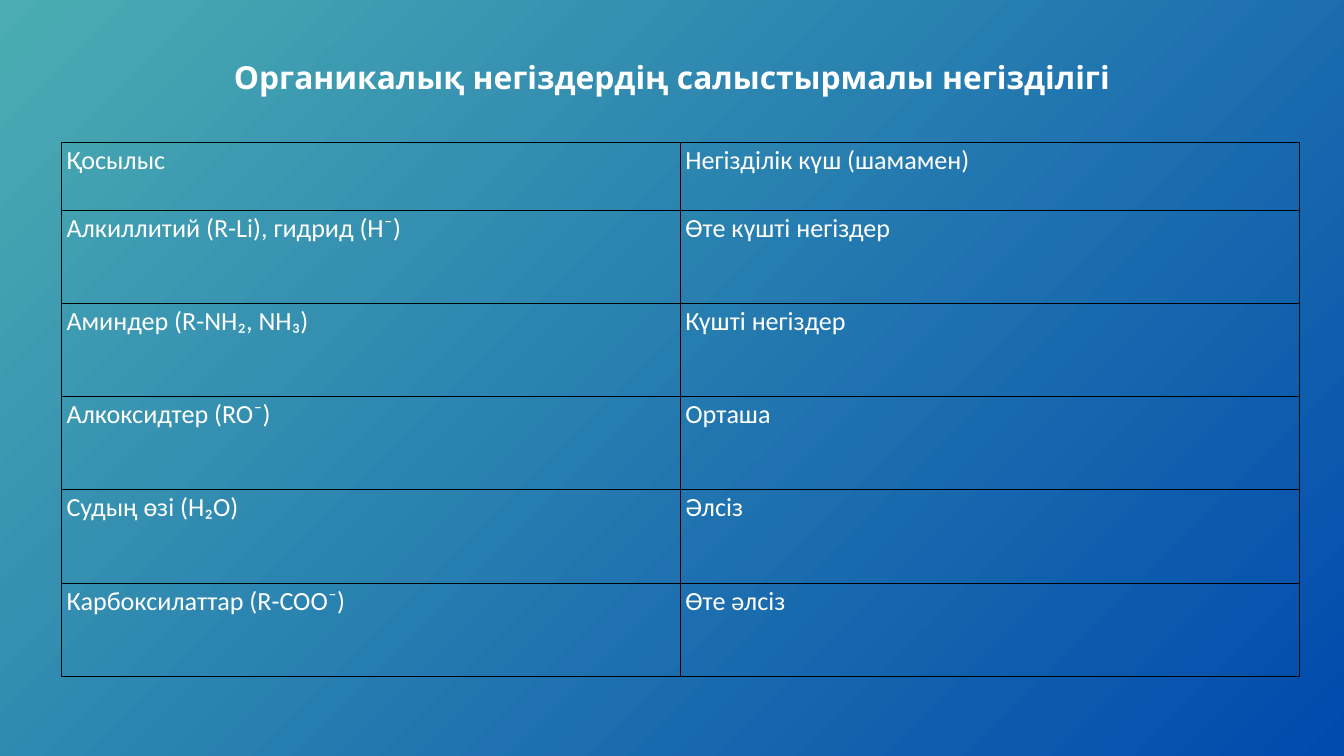
from lxml.etree import SubElement
from pptx import Presentation
from pptx.dml.color import RGBColor as Rgb
from pptx.enum.text import MSO_AUTO_SIZE as Fit, PP_ALIGN as Align
from pptx.oxml.ns import qn
from pptx.util import Inches, Pt

WHITE = Rgb(0xFF, 0xFF, 0xFF)
BLACK = Rgb(0x00, 0x00, 0x00)
TEAL = Rgb(0x4B, 0xAD, 0xB2)
BLUE = Rgb(0x00, 0x4A, 0xAD)

TITLE = "Органикалық негіздердің салыстырмалы негізділігі"
BASES = [
    ("Қосылыс", "Негізділік күш (шамамен)"),
    ("Алкиллитий (R-Li), гидрид (H⁻)", "Өте күшті негіздер"),
    ("Аминдер (R-NH₂, NH₃)", "Күшті негіздер"),
    ("Алкоксидтер (RO⁻)", "Орташа"),
    ("Судың өзі (H₂O)", "Әлсіз"),
    ("Карбоксилаттар (R-COO⁻)", "Өте әлсіз"),
]


def write(frame, text, font="Calibri", size=28, color=WHITE, bold=False,
          align=Align.LEFT, lead=1.07):
    para = frame.paragraphs[0]
    para.alignment = align
    para.line_spacing = lead
    run = para.add_run()
    run.text = text
    run.font.name = font
    run.font.size = Pt(size)
    run.font.bold = bold
    run.font.color.rgb = color


class Deck:
    """Draws styled elements on one slide with a grid of 100 columns by 100 rows."""

    def __init__(self, wide, high):
        self.prs = Presentation()
        self.prs.slide_width = Inches(wide)
        self.prs.slide_height = Inches(high)
        self.slide = self.prs.slides.add_slide(self.prs.slide_layouts[6])

    def x(self, cols):
        return round(self.prs.slide_width * cols / 100)

    def y(self, rows):
        return round(self.prs.slide_height * rows / 100)

    def box(self, left, top, wide, high):
        return self.x(left), self.y(top), self.x(wide), self.y(high)

    def back(self, start, end, angle):
        fill = self.slide.background.fill
        fill.gradient()
        fill.gradient_angle = 360 - angle
        for stop, color in zip(fill.gradient_stops, (start, end)):
            stop.color.rgb = color

    def title(self, text, *area):
        frame = self.slide.shapes.add_textbox(*self.box(*area)).text_frame
        frame.word_wrap = True
        frame.auto_size = Fit.SHAPE_TO_FIT_TEXT
        frame.margin_left = frame.margin_right = 0
        frame.margin_top = frame.margin_bottom = 0
        write(frame, text, font="Open Sans", size=34, bold=True,
              align=Align.CENTER, lead=Pt(47.6))

    def edge(self, cell, color=BLACK, width=1):
        props = cell._tc.get_or_add_tcPr()
        for side in ("lnL", "lnR", "lnT", "lnB"):
            line = SubElement(props, qn(f"a:{side}"), w=str(Pt(width)))
            fill = SubElement(line, qn("a:solidFill"))
            SubElement(fill, qn("a:srgbClr"), val=str(color))

    def table(self, data, head, *area):
        left, top, wide, high = self.box(*area)
        grid = self.slide.shapes.add_table(
            len(data), len(data[0]), left, top, wide, high).table
        grid.first_row = grid.horz_banding = False
        first = self.y(head)
        rest = (high - first) // (len(data) - 1)
        for i, (row, texts) in enumerate(zip(grid.rows, data)):
            row.height = rest if i else first
            for cell, text in zip(row.cells, texts):
                cell.margin_left = cell.margin_right = Inches(0.07)
                cell.margin_top = cell.margin_bottom = 0
                self.edge(cell)
                cell.fill.background()
                write(cell.text_frame, text)


def main():
    deck = Deck(20, 11.25)
    deck.back(TEAL, BLUE, 45)
    deck.title(TITLE, 17.35, 6.84, 65.3, 5.6)
    deck.table(BASES, 8.98, 4.6, 18.84, 92.1, 70.6)
    deck.prs.save("out.pptx")


if __name__ == "__main__":
    main()
